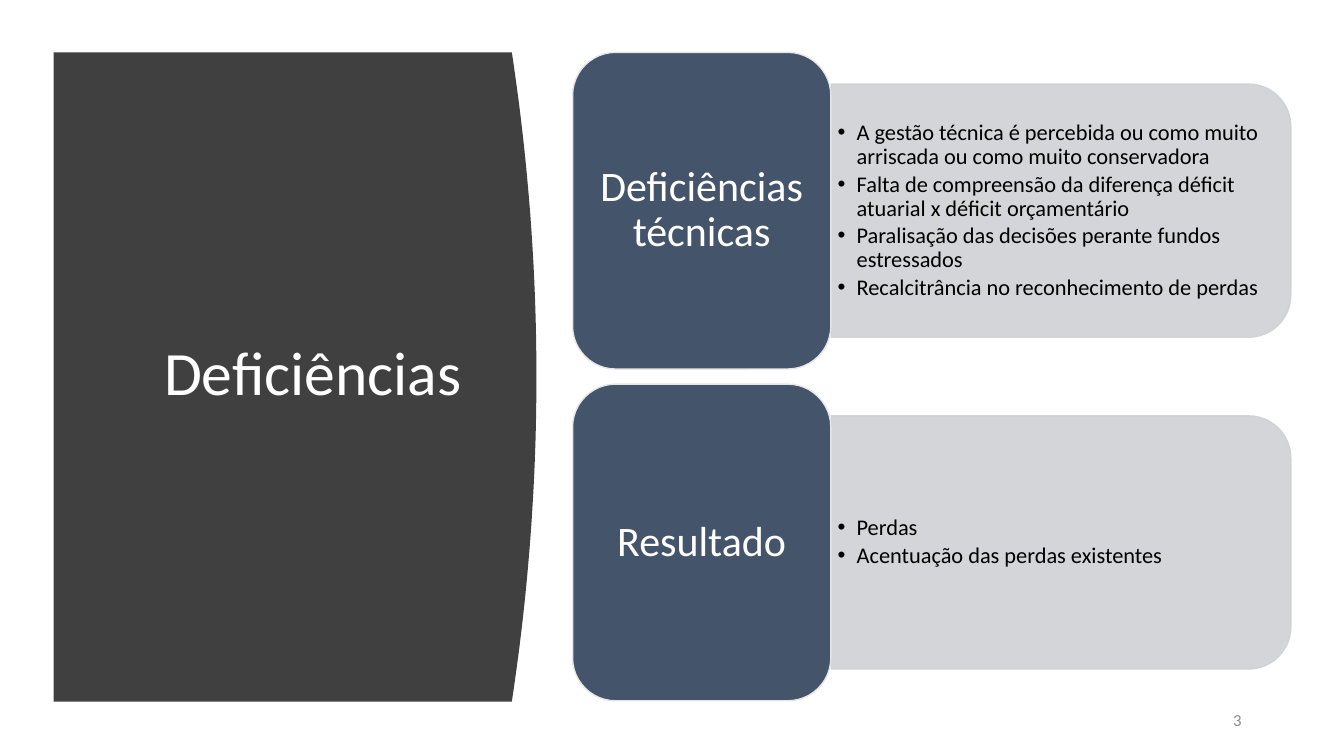
"""Builds the slide on technical deficiencies and their result."""
from lxml.etree import SubElement
from pptx import Presentation
from pptx.dml.color import RGBColor
from pptx.enum.shapes import MSO_SHAPE
from pptx.enum.text import MSO_ANCHOR, PP_ALIGN
from pptx.oxml.ns import qn
from pptx.util import Cm, Pt

COLORS = {
    "banner": "404040",
    "topic": "44546A",
    "topic_edge": "E7E6E6",
    "panel": "CFD1D4",
    "light": "FFFFFF",
    "dark": "000000",
    "number": "8C8C8C",
}
TOPICS = [
    ("Deficiências técnicas", [
        "A gestão técnica é percebida ou como muito arriscada ou como muito conservadora",
        "Falta de compreensão da diferença déficit atuarial x déficit orçamentário",
        "Paralisação das decisões perante fundos estressados",
        "Recalcitrância no reconhecimento de perdas",
    ]),
    ("Resultado", ["Perdas", "Acentuação das perdas existentes"]),
]
FIRST_TOP = 1.32
ROW_PITCH = 8.36


class DeficiencySlide:
    def __init__(self, slide, font="Calibri"):
        self.slide = slide
        self.font = font

    def color(self, name):
        return RGBColor.from_string(COLORS[name])

    def paint(self, shape, fill, edge=None, alpha=None):
        shape.shadow.inherit = False
        shape.fill.solid()
        shape.fill.fore_color.rgb = self.color(fill)
        if edge is None:
            shape.line.fill.background()
        else:
            shape.line.color.rgb = self.color(edge)
            shape.line.width = Pt(1)
        if alpha is not None:
            for tint in shape.element.spPr.iter(qn("a:srgbClr")):
                SubElement(tint, qn("a:alpha")).set("val", str(alpha * 1000))

    def set_text(self, shape, lines, size, color, align, insets=(0.25, 0.13), bullets=False):
        frame = shape.text_frame
        frame.text = "\n".join(lines)
        frame.word_wrap = True
        frame.vertical_anchor = MSO_ANCHOR.MIDDLE
        frame.margin_left = frame.margin_right = Cm(insets[0])
        frame.margin_top = frame.margin_bottom = Cm(insets[1])
        for paragraph in frame.paragraphs:
            if bullets:
                self.add_bullet(paragraph)
                paragraph.space_after = Pt(2.4)
            paragraph.alignment = align
            paragraph.line_spacing = 0.9
            for run in paragraph.runs:
                run.font.name = self.font
                run.font.size = Pt(size)
                run.font.color.rgb = self.color(color)

    def add_bullet(self, paragraph):
        properties = paragraph._p.get_or_add_pPr()
        properties.set("marL", str(Cm(0.48)))
        properties.set("indent", str(-Cm(0.48)))
        SubElement(properties, qn("a:buFont")).set("typeface", "Arial")
        SubElement(properties, qn("a:buChar")).set("char", "•")

    def text(self, box, lines, size, color, align, **style):
        area = self.slide.shapes.add_textbox(*map(Cm, box))
        self.set_text(area, lines, size, color, align, **style)

    def banner(self, left, top, edge, height, bulge, steps=40):
        curve = []
        for step in range(steps + 1):
            t = step / steps
            curve.append((Cm(edge + bulge * 4 * t * (1 - t)), Cm(top + height * t)))
        outline = self.slide.shapes.build_freeform(Cm(left), Cm(top))
        outline.add_line_segments(curve + [(Cm(left), Cm(top + height))], close=True)
        self.paint(outline.convert_to_shape(), "banner")

    def panel(self, top, points):
        panel = self.slide.shapes.add_shape(
            MSO_SHAPE.ROUND_2_SAME_RECTANGLE, Cm(23.55), Cm(top - 1.8), Cm(6.38), Cm(11.58))
        panel.rotation = 90
        self.paint(panel, "panel", "panel", alpha=90)
        self.text((20.93, top + 1.11, 11.28, 5.76), points, 16, "dark", PP_ALIGN.LEFT,
                  insets=(0.18, 0.08), bullets=True)

    def topic(self, top, name):
        topic = self.slide.shapes.add_shape(
            MSO_SHAPE.ROUNDED_RECTANGLE, Cm(14.43), Cm(top), Cm(6.51), Cm(7.98))
        self.paint(topic, "topic", "topic_edge")
        self.set_text(topic, [name], 30, "light", PP_ALIGN.CENTER, insets=(0.3, 0.15))


def main():
    deck = Presentation()
    deck.slide_width, deck.slide_height = Cm(33.87), Cm(19.05)
    page = DeficiencySlide(deck.slides.add_slide(deck.slide_layouts[6]))
    page.banner(1.35, FIRST_TOP, 12.9, 16.36, 0.62)
    page.text((2.39, 2.82, 9.5, 13.31), ["Deficiências"], 44, "light", PP_ALIGN.RIGHT)
    page.text((29.79, 17.65, 1.75, 1.02), ["3"], 12, "number", PP_ALIGN.RIGHT)
    for row, (name, points) in enumerate(TOPICS):
        top = FIRST_TOP + row * ROW_PITCH
        page.panel(top, points)
        page.topic(top, name)
    deck.save("out.pptx")


if __name__ == "__main__":
    main()
